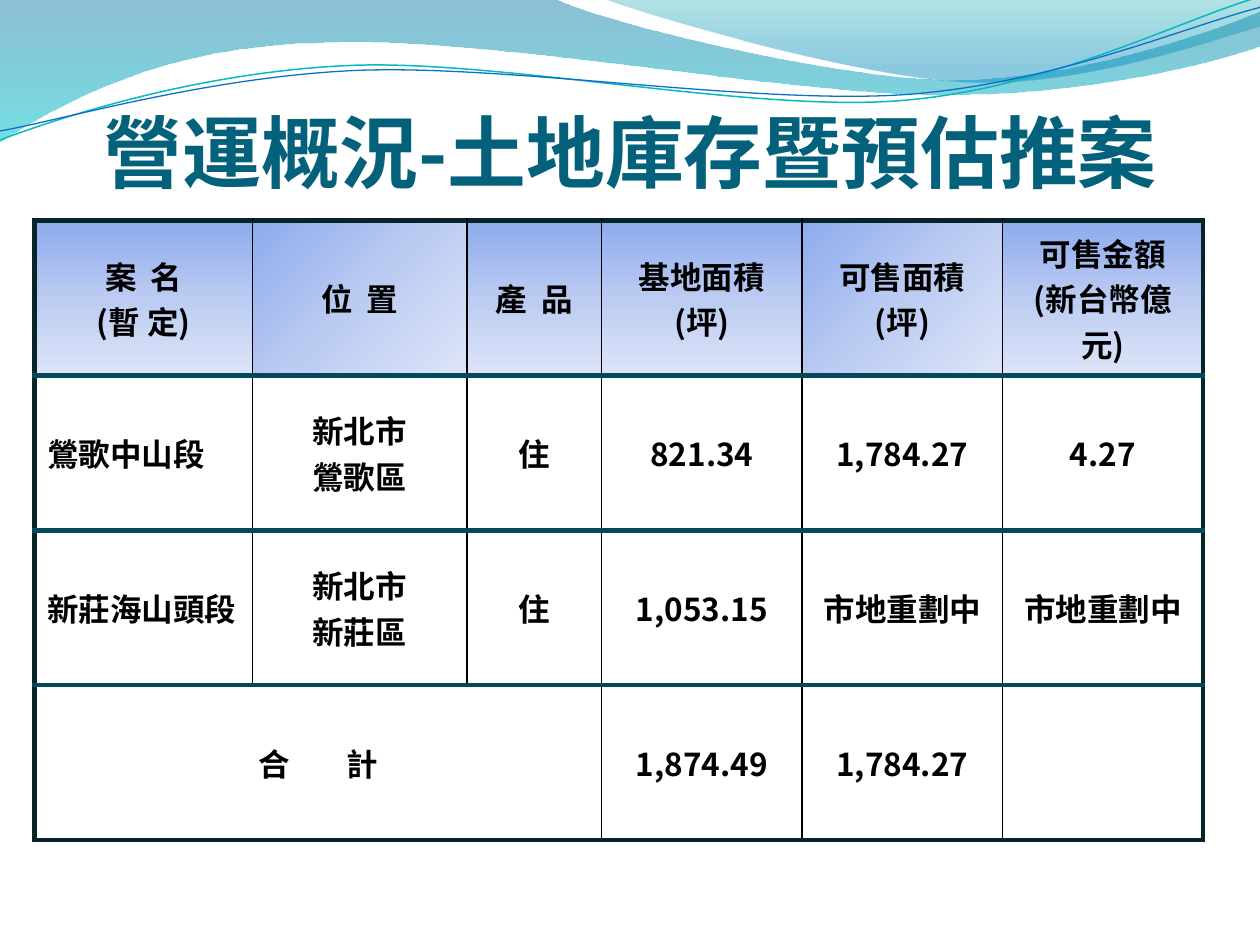
import math
import pptx
import pptx.util
import pptx.dml.color
import pptx.enum.text
import pptx.oxml.ns
import lxml.etree

Cm, Pt = pptx.util.Cm, pptx.util.Pt
Align = pptx.enum.text.PP_ALIGN
Anchor = pptx.enum.text.MSO_ANCHOR
qn = pptx.oxml.ns.qn

THEME = {
    "font": "Noto Sans CJK SC", "title_size": 45, "cell_size": 18,
    "title": "04617B", "text": "000000", "edge": "072428",
    "rule": "03495C", "thin": 1, "thick": 3,
    "head": [(0, "8EABEE", 100), (50, "BBCBF2", 100), (100, "DEE5F8", 100)],
    "wave": [(0, "0074A1", 45), (100, "00C6CF", 55)],
    "crest": [(0, "00A1A9", 30), (80, "008BBF", 45)],
}

TITLE = "營運概況-土地庫存暨預估推案"
ROWS = [
    ["案 名\n(暫 定)", "位 置", "產 品", "基地面積\n(坪)", "可售面積\n(坪)",
     "可售金額\n(新台幣億元)"],
    ["鶯歌中山段", "新北市\n鶯歌區", "住", "821.34", "1,784.27", "4.27"],
    ["新莊海山頭段", "新北市\n新莊區", "住", "1,053.15", "市地重劃中", "市地重劃中"],
    ["合 計", "", "", "1,874.49", "1,784.27", ""],
]
TRACK = {"案 名": 2, "位 置": 2, "產 品": 2, "合 計": 14}  # points
WIDTHS = [4.39, 4.32, 2.72, 4.04, 4.04, 4.04]
HEIGHT = 3.12
SLANTED = (1, 4)  # header columns with a diagonal blend

# Each outline is a start point, then line (1 point) or curve (3 points) steps, in cm.
BANDS = [
    ("wave", [[(0, -0.03)], [(11.18, -0.03)],
              [(12.09, 0.43), (16.87, 1.6), (19.25, 1.6)],
              [(21.67, 1.6), (24.33, 0.66), (25.4, 0.23)],
              [(25.43, 0.91)],
              [(24.97, 1.12), (22.1, 1.93), (18.95, 1.91)],
              [(15.8, 1.91), (9.7, 0.71), (6.53, 0.86)],
              [(3.28, 0.89), (1.17, 2.11), (-0.03, 2.87)]]),
    ("crest", [[(12.17, -0.03)],
               [(12.93, 0.28), (17.32, 1.57), (19.53, 1.65)],
               [(21.74, 1.75), (24.41, 0.81), (25.4, 0.53)],
               [(25.4, 0)]]),
]
TILT = -2.7
STRANDS = [
    ("0AB8BF", 0.85, (12.67, 1.46),
     [[(0, 2.82)], [(1.22, 2.36), (4.01, 1.45), (7.04, 1.32)],
      [(10.03, 1.19), (15.06, 2.26), (18.11, 2.03)],
      [(21.16, 1.8), (23.83, 0.38), (25.35, -0.05)]]),
    ("0F6FC6", 0.75, (12.69, 1.5),
     [[(0, 2.64)], [(1.19, 2.44), (4.17, 1.55), (7.19, 1.42)],
      [(10.24, 1.3), (15.16, 2.11), (18.21, 1.91)],
      [(21.23, 1.7), (23.9, 0.53), (25.4, 0.15)]]),
]


def rgb(code):
    return pptx.dml.color.RGBColor.from_string(code)


def add(parent, tag, **attrs):
    node = lxml.etree.SubElement(parent, qn(tag))
    for key, value in attrs.items():
        node.set(key, str(value))
    return node


def turn(steps, centre, angle):
    cos, sin = math.cos(math.radians(angle)), math.sin(math.radians(angle))
    cx, cy = centre
    return [[(cx + (x - cx) * cos - (y - cy) * sin,
              cy + (x - cx) * sin + (y - cy) * cos) for x, y in step]
            for step in steps]


def draw(slide, steps, close):
    """Build a freeform through the step ends, then bend its curve steps."""
    ends = [(Cm(x), Cm(y)) for x, y in (step[-1] for step in steps)]
    pen = slide.shapes.build_freeform(*ends[0])
    pen.add_line_segments(ends[1:], close=close)
    shape = pen.convert_to_shape()
    shape.shadow.inherit = False
    track = next(shape._element.iter(qn("a:path")))
    for old in list(track):
        track.remove(old)
    for i, step in enumerate(steps):
        tag = "a:cubicBezTo" if len(step) == 3 else "a:lnTo"
        move = add(track, tag if i else "a:moveTo")
        for x, y in step:
            add(move, "a:pt", x=Cm(x) - shape.left, y=Cm(y) - shape.top)
    if close:
        add(track, "a:close")
    return shape


def blend(fill, props, stops, angle):
    """Fill with gradient stops of (position, colour, opacity) in percent."""
    fill.gradient()
    fill.gradient_angle = 360 - angle
    group = props.find(qn("a:gradFill")).find(qn("a:gsLst"))
    for old in list(group):
        group.remove(old)
    for place, code, alpha in stops:
        tint = add(add(group, "a:gs", pos=place * 1000), "a:srgbClr", val=code)
        if alpha < 100:
            add(tint, "a:alpha", val=alpha * 1000)


def style(para, size, code):
    for run in para.runs:
        font = run.font
        font.size, font.bold, font.name = Pt(size), True, THEME["font"]
        font.color.rgb = rgb(code)
        add(run._r.get_or_add_rPr(), "a:ea", typeface=THEME["font"])


def write(cell, text, align):
    cell.vertical_anchor = Anchor.MIDDLE
    cell.text_frame.text = text
    for para, line in zip(cell.text_frame.paragraphs, text.split("\n")):
        para.alignment = align
        if line in TRACK:
            para.text = line[:-1]
            para.runs[0]._r.get_or_add_rPr().set("spc", str(TRACK[line] * 100))
            para.add_run().text = line[-1]
        style(para, THEME["cell_size"], THEME["text"])


def frame(cell, row, col):
    """Draw heavy outer edges, heavy row rules and thin column rules."""
    outer, rule = (THEME["edge"], THEME["thick"]), (THEME["rule"], THEME["thick"])
    thin = (THEME["text"], THEME["thin"])
    sides = {
        "a:lnL": outer if col == 0 else thin,
        "a:lnR": outer if col == len(WIDTHS) - 1 else thin,
        "a:lnT": outer if row == 0 else rule,
        "a:lnB": outer if row == len(ROWS) - 1 else rule,
    }
    for tag, (code, width) in sides.items():
        line = add(cell._tc.get_or_add_tcPr(), tag, w=int(Pt(width)))
        add(add(line, "a:solidFill"), "a:srgbClr", val=code)


def main():
    deck = pptx.Presentation()
    deck.slide_width, deck.slide_height = Cm(25.4), Cm(19.05)
    slide = deck.slides.add_slide(deck.slide_layouts[6])

    for name, steps in BANDS:
        band = draw(slide, steps, True)
        band.line.fill.background()
        blend(band.fill, band._element.spPr, THEME[name], 90)
    for code, width, centre, steps in STRANDS:
        strand = draw(slide, turn(steps, centre, -TILT), False)
        strand.rotation = TILT
        strand.fill.background()
        strand.line.color.rgb = rgb(code)
        strand.line.width = Pt(width)

    box = slide.shapes.add_textbox(Cm(1.27), Cm(1.96), Cm(22.86), Cm(3.18))
    body = box.text_frame
    body.word_wrap = True
    body.margin_left = body.margin_right = body.margin_bottom = 0
    body.text = TITLE
    title = body.paragraphs[0]
    title.alignment = Align.CENTER
    style(title, THEME["title_size"], THEME["title"])

    table = slide.shapes.add_table(
        len(ROWS), len(WIDTHS), Cm(0.7), Cm(4.45),
        Cm(sum(WIDTHS)), Cm(HEIGHT * len(ROWS))).table
    table.first_row = table.horz_banding = False
    for col, width in enumerate(WIDTHS):
        table.columns[col].width = Cm(width)
    for row, texts in enumerate(ROWS):
        table.rows[row].height = Cm(HEIGHT)
        for col, text in enumerate(texts):
            cell = table.cell(row, col)
            named = col == 0 and row in (1, 2)
            write(cell, text, Align.LEFT if named else Align.CENTER)
            frame(cell, row, col)
            if row == 0:
                blend(cell.fill, cell._tc.tcPr, THEME["head"],
                      45 if col in SLANTED else 90)
            else:
                cell.fill.background()
    last = len(ROWS) - 1
    table.cell(last, 0).merge(table.cell(last, 2))

    deck.save("out.pptx")


if __name__ == "__main__":
    main()
